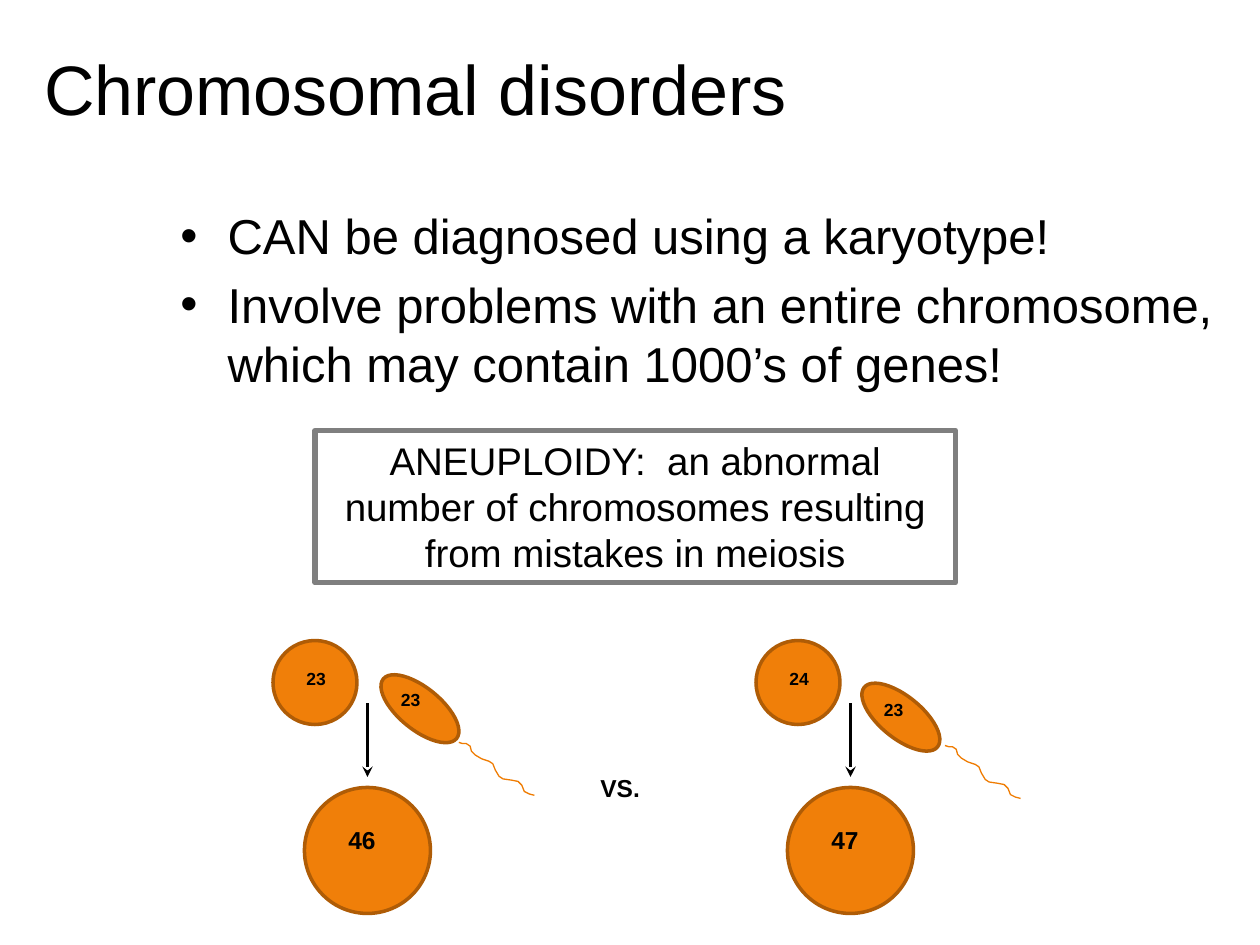
import pptx
import pptx.util
import pptx.dml.color
import pptx.enum.shapes
import pptx.enum.text
from lxml import etree
from pptx.oxml.ns import qn

RGB = pptx.dml.color.RGBColor
BLACK = RGB(0x00, 0x00, 0x00)
GREY = RGB(0x7F, 0x7F, 0x7F)
ORANGE = RGB(0xF0, 0x7F, 0x09)
BROWN = RGB(0xAF, 0x5C, 0x06)
TAIL = RGB(0xEF, 0x7C, 0x02)
Pt = pptx.util.Pt
SHAPE = pptx.enum.shapes.MSO_SHAPE
ALIGN = pptx.enum.text.PP_ALIGN
ANCHOR = pptx.enum.text.MSO_ANCHOR

prs = pptx.Presentation()
prs.slide_width = pptx.util.Inches(10)
prs.slide_height = pptx.util.Inches(7.5)
U = prs.slide_width / 120  # grid of 120 columns by 90 rows
s = prs.slides.add_slide(prs.slide_layouts[5])


def box(x, y, w, h):
    return [round(v * U) for v in (x, y, w, h)]


def write(sp, lines, size, bold=False, align=ALIGN.LEFT, anchor=ANCHOR.TOP, bullet=False):
    tf = sp.text_frame
    tf.word_wrap = True
    tf.vertical_anchor = anchor
    for i, line in enumerate(lines):
        p = tf.paragraphs[0] if i == 0 else tf.add_paragraph()
        p.alignment = align
        if i:
            p.space_before = Pt(5.6)
        if bullet:
            pPr = p._p.get_or_add_pPr()
            pPr.set("marL", "342900")
            pPr.set("indent", "-342900")
            etree.SubElement(pPr, qn("a:buFont"), typeface="Arial")
            etree.SubElement(pPr, qn("a:buChar"), char="•")
        r = p.add_run()
        r.text = line
        r.font.name = "Arial"
        r.font.size = Pt(size)
        r.font.bold = bold
        r.font.color.rgb = BLACK


# Title
title = s.shapes.title
title.left, title.top, title.width, title.height = box(3, 2.2, 107.5, 12.3)
write(title, ["Chromosomal disorders"], 40, anchor=ANCHOR.MIDDLE)

# Bullets
write(s.shapes.add_textbox(*box(16, 19, 101, 64)),
      ["CAN be diagnosed using a karyotype!",
       "Involve problems with an entire chromosome, which may contain 1000’s of genes!"],
      28, bullet=True)

# Definition
sp = s.shapes.add_shape(SHAPE.RECTANGLE, *box(30, 41, 61, 14.5))
sp.shadow.inherit = False
sp.fill.background()
sp.line.color.rgb = GREY
sp.line.width = Pt(3)
write(sp, ["ANEUPLOIDY:  an abnormal number of chromosomes resulting from mistakes in meiosis"],
      22, align=ALIGN.CENTER)

# Fertilisations: left column, egg, sperm and zygote counts,
# sperm cell, sperm label and tail positions
FERTILISATIONS = [
    (26, "23", "23", "46", (38, 63), (37, 65), (43.7, 70.7)),
    (72, "24", "23", "47", (83.8, 63.8), (83, 66), (90, 71)),
]
# Tail points in hundredths of an inch from its start
TAIL_POINTS = [(3, 1), (6, 1), (9, 3), (10, 7), (13, 10), (18, 13), (24, 15),
               (27, 17), (29, 22), (32, 27), (35, 29), (42, 30), (47, 31),
               (50, 34), (52, 39), (56, 41), (60, 42)]

for x, egg, sperm, zygote, cell, label, tail in FERTILISATIONS:
    # Egg, sperm and zygote
    for left, top, w, h, turn in [(x, 61, 8, 8, 0), (*cell, 4, 9, 309.1),
                                  (x + 3, 75, 12, 12, 0)]:
        sp = s.shapes.add_shape(SHAPE.OVAL, *box(left, top, w, h))
        sp.rotation = turn
        sp.shadow.inherit = False
        sp.fill.solid()
        sp.fill.fore_color.rgb = ORANGE
        sp.line.color.rgb = BROWN
        sp.line.width = Pt(2)

    # Sperm tail
    fb = s.shapes.build_freeform(0, 0, scale=9144)
    fb.add_line_segments(TAIL_POINTS, close=False)
    sp = fb.convert_to_shape(round(tail[0] * U), round(tail[1] * U))
    sp.shadow.inherit = False
    sp.fill.background()
    sp.line.color.rgb = TAIL
    sp.line.width = Pt(0.75)

    # Arrow to the zygote
    c = s.shapes.add_connector(pptx.enum.shapes.MSO_CONNECTOR.STRAIGHT,
                               *box(x + 9, 67, x + 9, 74))
    c.line.color.rgb = BLACK
    c.line.width = Pt(2)
    etree.SubElement(c.line._get_or_add_ln(), qn("a:tailEnd"), type="stealth")
    etree.SubElement(c._element.spPr, qn("a:effectLst"))

    # Chromosome counts
    for text, left, top, h, size in [(egg, x + 2, 63, 3.2, 10), (sperm, *label, 3.2, 10),
                                     (zygote, x + 6, 78, 4, 14)]:
        write(s.shapes.add_textbox(*box(left, top, 6, h)), [text], size, bold=True)

write(s.shapes.add_textbox(*box(56, 73, 8, 4)), ["VS."], 14, bold=True)

prs.save("out.pptx")
